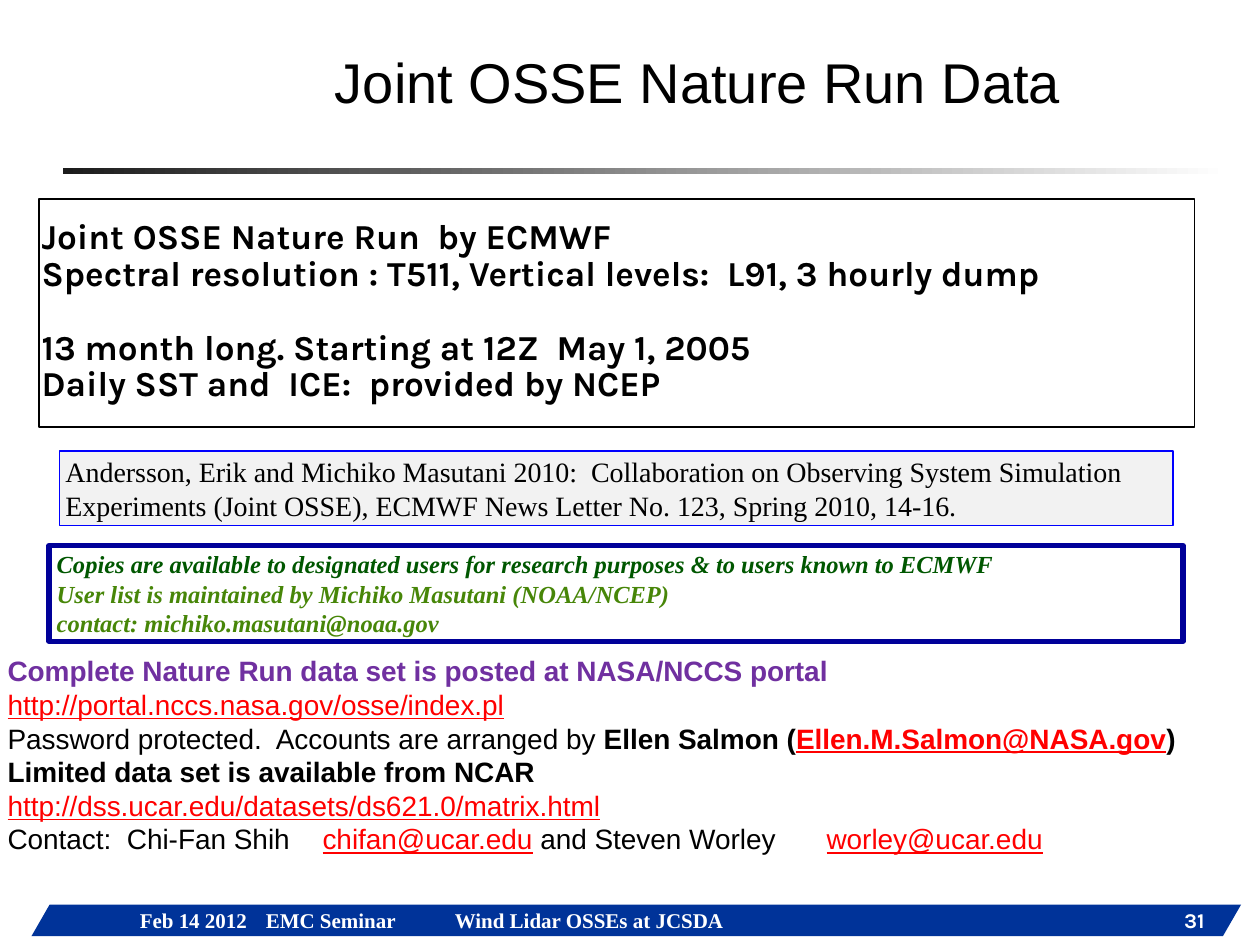
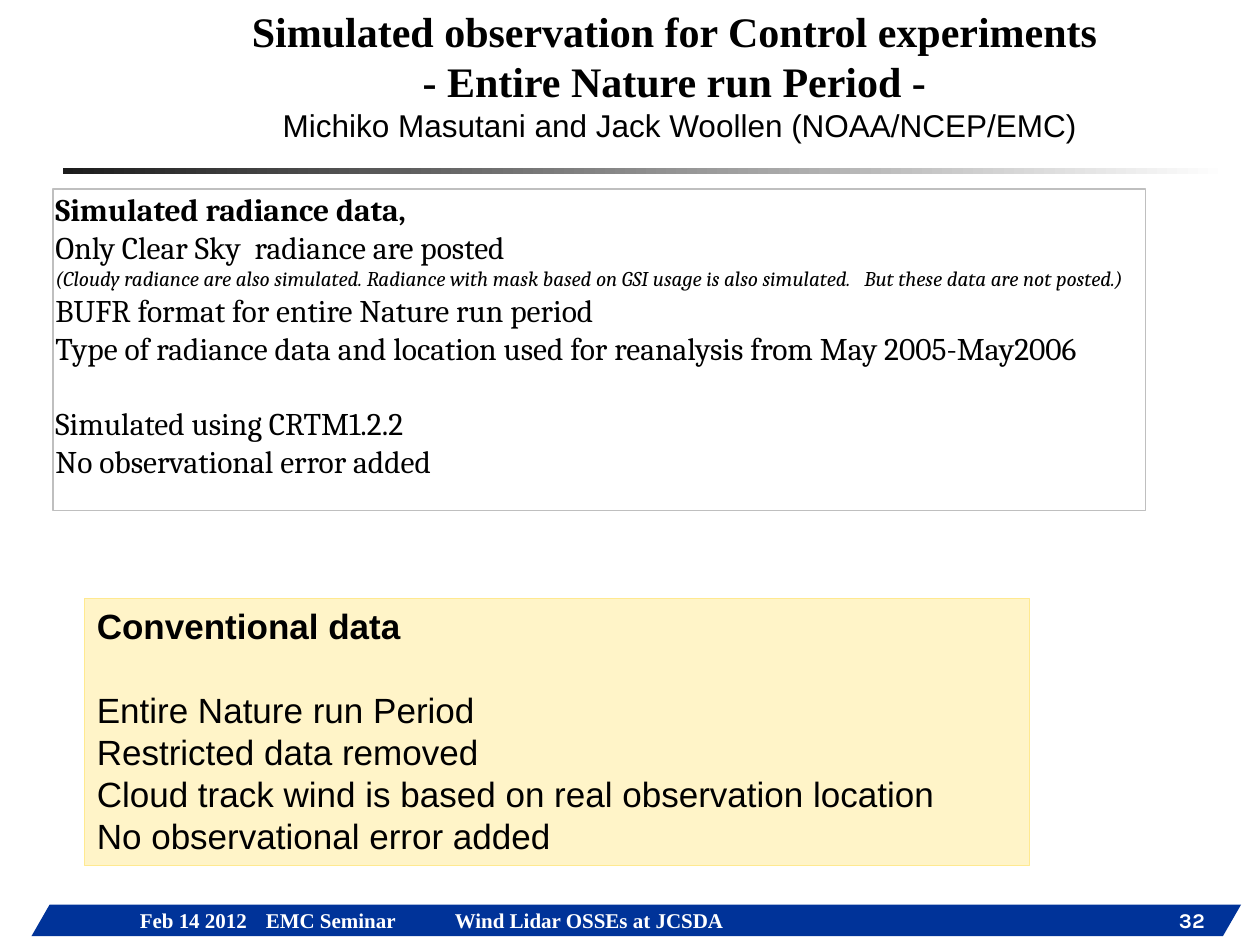
from lxml import etree
from pptx import Presentation
from pptx.dml.color import RGBColor
from pptx.enum.shapes import MSO_SHAPE
from pptx.enum.text import MSO_ANCHOR, MSO_AUTO_SIZE, PP_ALIGN
from pptx.oxml.ns import qn
from pptx.util import Inches, Pt

RECT, SLANT = MSO_SHAPE.RECTANGLE, MSO_SHAPE.PARALLELOGRAM
TOP, MIDDLE, BOTTOM = MSO_ANCHOR.TOP, MSO_ANCHOR.MIDDLE, MSO_ANCHOR.BOTTOM
LEFT, CENTER, RIGHT = PP_ALIGN.LEFT, PP_ALIGN.CENTER, PP_ALIGN.RIGHT
FIXED = MSO_AUTO_SIZE.NONE


class Theme:
    black, white = "000000", "FFFFFF"
    band, dark = "003399", "1C1C1C"
    blue, navy = "0000FF", "000099"
    gray, silver = "F2F2F2", "BFBFBF"
    cream, gold = "FFF4C8", "FFE990"
    serif, sans, book, label = "Times New Roman", "Arial", "Cambria", "Karla"

    title = dict(name=sans, size=32, color=black)
    lead = dict(name=serif, size=24, bold=True, color=black)
    author = dict(name=sans, size=18, bold=False, color=black)
    foot = dict(name=serif, size=12, bold=True, color=white)
    page = dict(name=label, size=12, bold=True, color=white)
    run = dict(name=label, size=20, bold=True, color=black)
    cite = dict(name=serif, size=16, color=black)
    note = dict(name=serif, size=14, bold=True, italic=True, color="478608")
    portal = dict(name=sans, size=16, color=black)
    data = dict(name=book, size=18, color=black)
    plain = dict(name=sans, size=20, color=black)

    bold = dict(bold=True)
    small = dict(size=12, italic=True)
    green = dict(color="005700")
    purple = dict(color="7030A0", bold=True)
    link = dict(color="FF0000", underline=True)


def rgb(code):
    return RGBColor.from_string(code)


def style(font, form):
    for key, value in form.items():
        if key == "color":
            font.color.rgb = rgb(value)
        else:
            setattr(font, key, Pt(value) if key == "size" else value)


def write(shape, lines, base, pad=(0.1, 0.05), anchor=TOP, align=LEFT,
          gaps=None, tabs=(), **layout):
    """Each line is a string or a list of (text, format) runs.

    gaps maps a line number to its space before, in points.
    """
    frame = shape.text_frame
    side, edge = map(Inches, pad)
    form = dict(word_wrap=True, auto_size=FIXED, vertical_anchor=anchor,
                margin_left=side, margin_right=side,
                margin_top=edge, margin_bottom=edge)
    for key, value in form.items():
        setattr(frame, key, value)
    for num, line in enumerate(lines):
        para = frame.add_paragraph() if num else frame.paragraphs[0]
        props = para._p.get_or_add_pPr()
        props.set("marL", "0")
        props.set("indent", "0")
        etree.SubElement(props, qn("a:buNone"))
        if tabs:
            stops = etree.SubElement(props, qn("a:tabLst"))
            for pos in tabs:
                etree.SubElement(stops, qn("a:tab"),
                                 pos=str(Inches(pos)), algn="l")
        para.alignment = align
        para.space_before = Pt((gaps or {}).get(num, 0))
        for key, value in layout.items():
            setattr(para, key, value)
        for text, extra in [(line, {})] if isinstance(line, str) else line:
            run = para.add_run()
            run.text = text
            style(run.font, {**base, **extra})


def place(shape, box):
    names = ("left", "top", "width", "height")
    for name, value in zip(names, box):
        setattr(shape, name, Inches(value))
    return shape


def paint(shape, fill=None, line=None, width=0.75):
    if fill:
        shape.fill.solid()
        shape.fill.fore_color.rgb = rgb(fill)
    else:
        shape.fill.background()
    if line:
        shape.line.color.rgb = rgb(line)
        shape.line.width = Pt(width)
    else:
        shape.line.fill.background()
    shape.shadow.inherit = False
    return shape


def draw(slide, kind, box, *look):
    shape = slide.shapes.add_shape(kind, *map(Inches, box))
    return paint(shape, *look)


def text(slide, box):
    return slide.shapes.add_textbox(*map(Inches, box))


def frame(slide):
    """Put the title rule and the footer band on the slide's layout."""
    rule = draw(slide, RECT, (0.5, 1.33, 9.25, 0.05))
    rule.fill.gradient()
    rule.fill.gradient_angle = 0
    for stop, code in zip(rule.fill.gradient_stops, (Theme.dark, Theme.white)):
        stop.color.rgb = rgb(code)
    band = draw(slide, SLANT, (0.25, 7.18, 9.6, 0.25), Theme.band)
    band.adjustments[0] = 0.575
    write(band, ["Feb 14 2012\tEMC Seminar\tWind Lidar OSSEs at JCSDA"],
          Theme.foot, (0, 0.05), MIDDLE, tabs=(1.18, 3.04))
    for shape in (rule, band):
        slide.slide_layout.shapes.element.append(shape.element)


def number(slide, num):
    write(text(slide, (7.58, 6.95, 2.08, 0.5)), [str(num)], Theme.page,
          anchor=BOTTOM, align=RIGHT)


def nature(slide, box):
    body = paint(place(slide.placeholders[1], box), None, Theme.black)
    write(body, [
        "Joint OSSE Nature Run  by ECMWF",
        "Spectral resolution : T511, Vertical levels:  L91, 3 hourly dump",
        "13 month long. Starting at 12Z  May 1, 2005",
        "Daily SST and  ICE:  provided by NCEP",
    ], Theme.run, (0.02, 0.01), MIDDLE, gaps={1: 1.9, 2: 23, 3: 1.5},
        line_spacing=0.8)


def paper(slide, box):
    card = draw(slide, RECT, box, Theme.gray, Theme.blue)
    write(card, [
        "Andersson, Erik and Michiko Masutani 2010:  Collaboration on "
        "Observing System Simulation Experiments (Joint OSSE), ECMWF News "
        "Letter No. 123, Spring 2010, 14-16.",
    ], Theme.cite, (0.05, 0.03))


def access(slide, box):
    card = draw(slide, RECT, box, None, Theme.navy, 3)
    write(card, [
        [("Copies are available to designated users for research purposes "
          "& to users known to ECMWF", Theme.green)],
        "User list is maintained by Michiko Masutani (NOAA/NCEP)",
        "contact: michiko.masutani@noaa.gov",
    ], Theme.note, (0.06, 0.03))


def portals(slide, box):
    bold, link = Theme.bold, Theme.link
    write(text(slide, box), [
        [("Complete Nature Run data set is posted at NASA/NCCS portal",
          Theme.purple)],
        [("http://portal.nccs.nasa.gov/osse/index.pl", link)],
        [("Password protected.  Accounts are arranged by ", {}),
         ("Ellen Salmon (", bold),
         ("Ellen.M.Salmon@NASA.gov", {**bold, **link}), (")", bold)],
        [("Limited data set is available from NCAR", bold)],
        [("http://dss.ucar.edu/datasets/ds621.0/matrix.html", link)],
        [("Contact:  Chi-Fan Shih\t", {}), ("chifan@ucar.edu", link),
         (" and Steven Worley\t", {}), ("worley@ucar.edu", link)],
    ], Theme.portal, (0.03, 0.02), tabs=(2.61, 6.51))


def radiance(slide, box):
    body = paint(place(slide.placeholders[1], box), Theme.white, Theme.silver)
    write(body, [
        [("Simulated radiance data,", Theme.bold)],
        "Only Clear Sky  radiance are posted",
        [("(Cloudy radiance are also simulated. Radiance with mask based on "
          "GSI usage is also simulated.   But these data are not posted.)",
          Theme.small)],
        "BUFR format for entire Nature run period",
        "Type of radiance data and location used for reanalysis from "
        "May 2005-May2006",
        "Simulated using CRTM1.2.2",
        "No observational error added",
    ], Theme.data, (0.02, 0.01), gaps={5: 21.5})


def regular(slide, box):
    """Card about the conventional data."""
    card = draw(slide, RECT, box, Theme.cream, Theme.gold)
    write(card, [
        [("Conventional data", Theme.bold)],
        "Entire Nature run Period",
        "Restricted data removed",
        "Cloud track wind is based on real observation location",
        "No observational error added",
    ], Theme.plain, gaps={1: 24})


def source(slide):
    """Slide on the nature run and where to get it."""
    title = place(slide.shapes.title, (2.25, 0.33, 6.58, 0.64))
    write(title, ["Joint OSSE Nature Run Data"], Theme.title, align=CENTER)
    nature(slide, (0.31, 1.58, 9.17, 1.81))
    paper(slide, (0.47, 3.58, 8.84, 0.59))
    access(slide, (0.39, 4.33, 9, 0.76))
    portals(slide, (0.03, 5.17, 9.72, 1.65))


def control(slide):
    """Slide on the simulated observations."""
    title = place(slide.shapes.title, (0.98, -0.17, 8.83, 1.52))
    write(title, [
        "Simulated observation for Control experiments ",
        "- Entire Nature run Period - ",
        [("Michiko Masutani and Jack Woollen (NOAA/NCEP/EMC)", Theme.author)],
    ], Theme.lead, (0.05, 0.03), MIDDLE, CENTER)
    radiance(slide, (0.42, 1.5, 8.67, 2.55))
    regular(slide, (0.67, 4.75, 7.5, 2.12))


def main():
    deck = Presentation()
    deck.slide_width, deck.slide_height = Inches(10), Inches(7.5)
    layout = deck.slide_layouts[1]
    for num, build in enumerate((source, control), 31):
        slide = deck.slides.add_slide(layout)
        if num == 31:
            frame(slide)
        build(slide)
        number(slide, num)
    deck.save("out.pptx")


if __name__ == "__main__":
    main()
